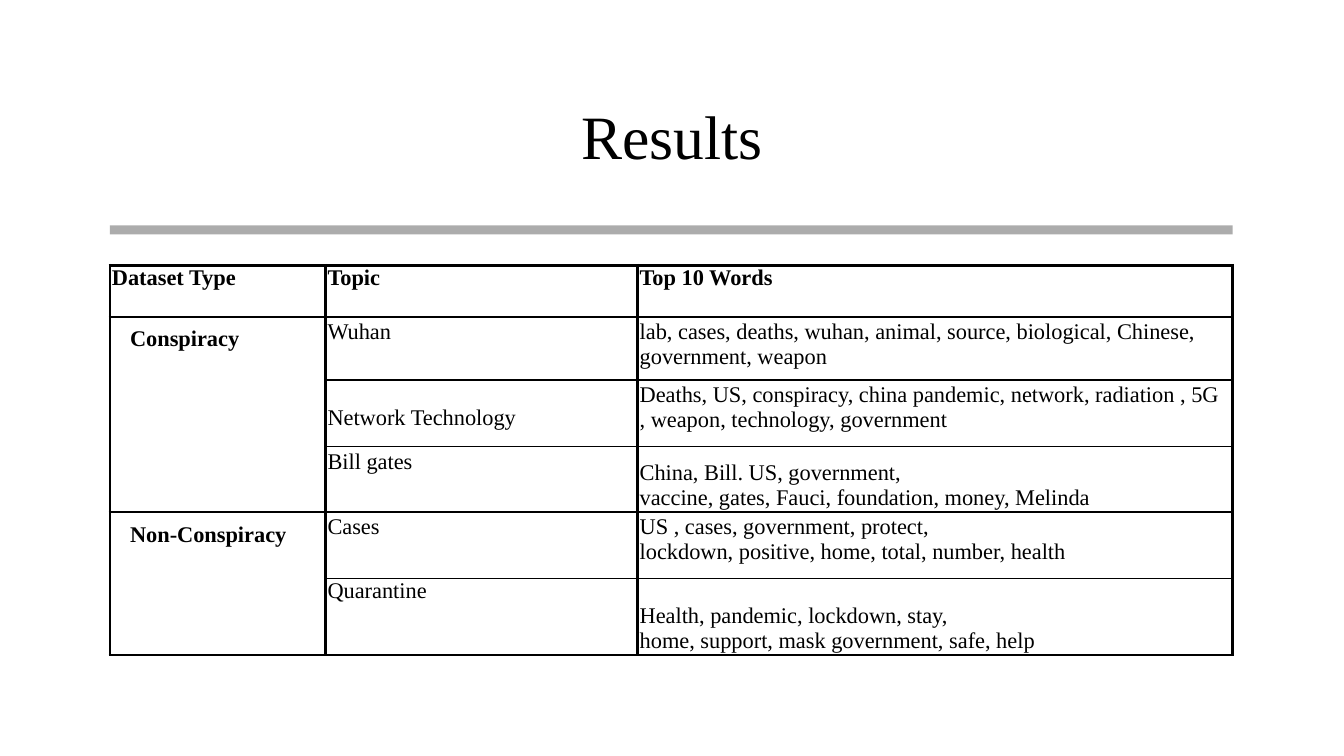
from lxml.etree import SubElement
from pptx import Presentation
from pptx.dml.color import RGBColor
from pptx.enum.shapes import MSO_SHAPE
from pptx.enum.text import MSO_ANCHOR, MSO_AUTO_SIZE, PP_ALIGN
from pptx.oxml.ns import qn
from pptx.util import Pt

FONT = "Times New Roman"
COLORS = {"ink": "000000", "band": "808080"}
LEFT, WIDTH = 78.5, 802
COLS = [154, 223, 425]
ROWS = [37, 45, 47.5, 47, 47, 55]
EDGES = [2.25, 2.25, 1, 1, 1.5, 1, 2.25]
SPANS = [(1, 3), (4, 5)]
CELLS = [
    (0, 0, 0.5, ["Dataset Type"]),
    (0, 1, 0.5, ["Topic"]),
    (0, 2, 0.5, ["Top 10 Words"]),
    (1, 0, 7, ["Conspiracy"]),
    (1, 1, 1.5, ["Wuhan"]),
    (1, 2, 1.5, ["lab, cases, deaths, wuhan, animal, source, biological, Chinese,",
                 "government, weapon"]),
    (2, 1, 18.5, ["Network Technology"]),
    (2, 2, 1.5, ["Deaths, US, conspiracy, china pandemic, network, radiation , 5G",
                 ", weapon, technology, government"]),
    (3, 1, 2, ["Bill gates"]),
    (3, 2, 10, ["China, Bill. US, government,",
                "vaccine, gates, Fauci, foundation, money, Melinda"]),
    (4, 0, 7, ["Non-Conspiracy"]),
    (4, 1, 1.5, ["Cases"]),
    (4, 2, 1.5, ["US , cases, government, protect,",
                 "lockdown, positive, home, total, number, health"]),
    (5, 1, 0.5, ["Quarantine"]),
    (5, 2, 18, ["Health, pandemic, lockdown, stay,",
                "home, support, mask government, safe, help"]),
]


def color(name):
    return RGBColor.from_string(COLORS[name])


def style(para, size, bold=False):
    para.font.name = FONT
    para.font.size = Pt(size)
    para.font.bold = bold
    para.font.color.rgb = color("ink")


def add_title(slide, text):
    title = slide.shapes.title
    title.left, title.top = Pt(68.5), Pt(47.5)
    title.width, title.height = Pt(823), Pt(104.4)
    frame = title.text_frame
    frame.text = text
    frame.auto_size = MSO_AUTO_SIZE.NONE
    frame.vertical_anchor = MSO_ANCHOR.MIDDLE
    para = frame.paragraphs[0]
    para.alignment = PP_ALIGN.CENTER
    para.line_spacing = 0.9
    style(para, 44)


def add_band(slide):
    band = slide.shapes.add_shape(
        MSO_SHAPE.RECTANGLE, Pt(LEFT), Pt(161), Pt(WIDTH), Pt(6.5))
    band.shadow.inherit = False
    band.fill.solid()
    band.fill.fore_color.rgb = color("band")
    band.line.fill.background()
    tint = band._element.spPr.find(qn("a:solidFill"))[0]
    SubElement(tint, qn("a:alpha"), val="65000")


def add_edge(cell, side, width):
    line = SubElement(cell._tc.get_or_add_tcPr(), qn("a:ln" + side),
                      w=str(Pt(width)))
    fill = SubElement(line, qn("a:solidFill"))
    SubElement(fill, qn("a:srgbClr"), val=COLORS["ink"])


def add_edges(cell, row, col):
    first, last = row, row
    if col == 0:
        for top, end in SPANS:
            if top <= row <= end:
                first, last = top, end
    add_edge(cell, "L", 2.25)
    add_edge(cell, "R", 2.25)
    add_edge(cell, "T", EDGES[first])
    add_edge(cell, "B", EDGES[last + 1])


def fill_cell(cell, row, col, top, lines):
    inset = 14.4 if row and col == 0 else 1.5
    cell.margin_left = cell.margin_right = Pt(inset)
    cell.margin_top, cell.margin_bottom = Pt(top), Pt(0)
    cell.vertical_anchor = MSO_ANCHOR.TOP
    cell.text = "\n".join(lines)
    for para in cell.text_frame.paragraphs:
        style(para, 16, row == 0 or col == 0)


def add_grid(slide):
    table = slide.shapes.add_table(
        len(ROWS), len(COLS), Pt(LEFT), Pt(189.5),
        Pt(WIDTH), Pt(sum(ROWS))).table
    table.first_row = table.horz_banding = False
    for col, width in enumerate(COLS):
        table.columns[col].width = Pt(width)
    for row, height in enumerate(ROWS):
        table.rows[row].height = Pt(height)
        for col in range(len(COLS)):
            cell = table.cell(row, col)
            add_edges(cell, row, col)
            cell.fill.background()
    for top, end in SPANS:
        table.cell(top, 0).merge(table.cell(end, 0))
    for row, col, top, lines in CELLS:
        fill_cell(table.cell(row, col), row, col, top, lines)


def main():
    deck = Presentation()
    deck.slide_width, deck.slide_height = Pt(960), Pt(540)
    slide = deck.slides.add_slide(deck.slide_layouts[5])
    add_title(slide, "Results")
    add_band(slide)
    add_grid(slide)
    deck.save("out.pptx")


if __name__ == "__main__":
    main()
